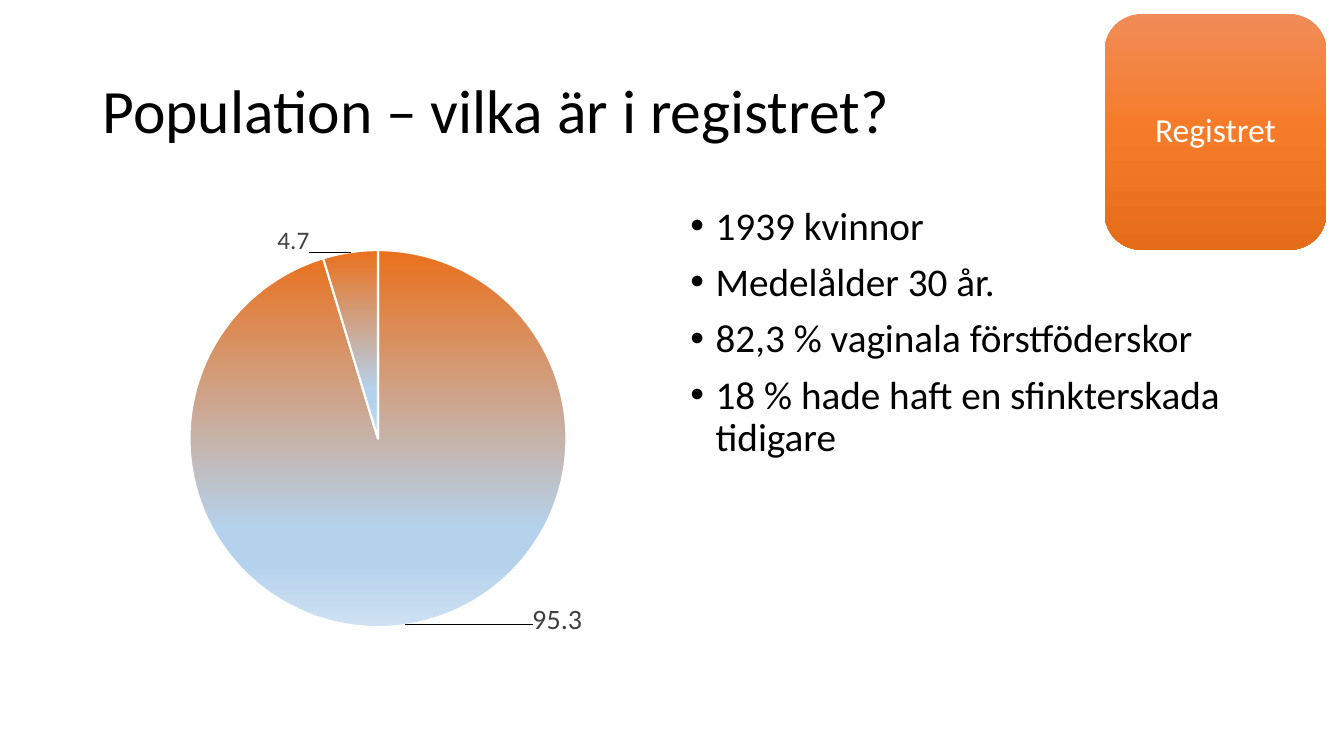
from dataclasses import dataclass
from lxml.etree import SubElement
from pptx import Presentation
from pptx.chart.data import CategoryChartData
from pptx.dml.color import RGBColor
from pptx.enum.chart import XL_CHART_TYPE, XL_LABEL_POSITION
from pptx.enum.shapes import MSO_SHAPE
from pptx.enum.text import MSO_ANCHOR, MSO_AUTO_SIZE, PP_ALIGN
from pptx.oxml import parse_xml
from pptx.oxml.ns import nsdecls, qn
from pptx.util import Pt


@dataclass(frozen=True)
class Theme:
    font: str = "Calibri"
    ink: str = "000000"
    paper: str = "FFFFFF"
    note: str = "404040"
    badge: tuple = ((0, "F18C57"), (50, "F67B28"), (100, "E56C19"))
    slice: tuple = ((0, "EA701C"), (74, "B5D2EC"), (83, "B5D2EC"), (100, "CEE1F2"))
    head: int = 44
    body: int = 28
    tag: int = 24
    base: int = 10


def style(font, size, color, face):
    font.name = face
    font.size = Pt(size)
    font.color.rgb = RGBColor.from_string(color)


def write(para, text, size, color, face, align=PP_ALIGN.LEFT, before=0, bullet=False):
    para.alignment = align
    para.line_spacing = 0.9
    para.space_before = Pt(before)
    run = para.add_run()
    run.text = text
    style(run.font, size, color, face)
    if bullet:
        props = para._p.get_or_add_pPr()
        props.set("marL", str(Pt(18)))
        props.set("indent", str(-Pt(18)))
        SubElement(props, qn("a:buFont")).set("typeface", "Arial")
        SubElement(props, qn("a:buChar")).set("char", "•")


def blend(fill, node, stops):
    fill.gradient()
    fill.gradient_angle = 270
    ramp = node.xpath(".//a:gsLst")[-1]
    for stop in list(ramp):
        ramp.remove(stop)
    for place, color in stops:
        stop = SubElement(ramp, qn("a:gs"))
        stop.set("pos", str(place * 1000))
        SubElement(stop, qn("a:srgbClr")).set("val", color)


def layout(inner=False, **parts):
    target = '<c:layoutTarget val="inner"/>' if inner else ""
    modes = "".join(f'<c:{key}Mode val="edge"/>' for key in "xy") if inner else ""
    sizes = "".join(f'<c:{key} val="{value}"/>' for key, value in parts.items())
    return parse_xml(
        f'<c:layout {nsdecls("c")}><c:manualLayout>{target}{modes}{sizes}'
        "</c:manualLayout></c:layout>"
    )


class Deck:
    def __init__(self, theme):
        self.theme = theme
        self.show = Presentation()
        self.show.slide_width = Pt(960)
        self.show.slide_height = Pt(540)
        self.slide = self.show.slides.add_slide(self.show.slide_layouts[1])

    def place(self, shape, box, anchor):
        shape.left, shape.top, shape.width, shape.height = map(Pt, box)
        frame = shape.text_frame
        frame.word_wrap = True
        frame.auto_size = MSO_AUTO_SIZE.NONE
        frame.vertical_anchor = anchor
        return frame

    def title(self, text, box):
        look = self.theme
        frame = self.place(self.slide.shapes.title, box, MSO_ANCHOR.MIDDLE)
        write(frame.paragraphs[0], text, look.head, look.ink, look.font)

    def list(self, items, box):
        look = self.theme
        frame = self.place(self.slide.placeholders[1], box, MSO_ANCHOR.TOP)
        for num, text in enumerate(items):
            para = frame.add_paragraph() if num else frame.paragraphs[0]
            write(para, text, look.body, look.ink, look.font, before=10, bullet=True)

    def badge(self, text, box):
        look = self.theme
        shape = self.slide.shapes.add_shape(MSO_SHAPE.ROUNDED_RECTANGLE, *map(Pt, box))
        shape.shadow.inherit = False
        shape.line.fill.background()
        blend(shape.fill, shape._element.spPr, look.badge)
        frame = self.place(shape, box, MSO_ANCHOR.MIDDLE)
        write(frame.paragraphs[0], text, look.tag, look.paper, look.font,
              align=PP_ALIGN.CENTER)

    def pie(self, values, labels, box):
        look = self.theme
        data = CategoryChartData()
        data.categories = [str(num + 1) for num in range(len(values))]
        data.add_series("Series 1", values)
        chart = self.slide.shapes.add_chart(XL_CHART_TYPE.PIE, *map(Pt, box), data).chart
        chart.has_legend = False
        chart.has_title = False
        style(chart.font, look.base, look.ink, look.font)
        area = chart._chartSpace.chart.plotArea
        for old in area.findall(qn("c:layout")):
            area.remove(old)
        area.insert(0, layout(True, x=0.17, y=0.1, w=0.66, h=0.79))
        chart.plots[0].vary_by_categories = True
        series = chart.plots[0].series[0]
        for num, (size, x, y) in enumerate(labels):
            point = series.points[num]
            blend(point.format.fill, series._element, look.slice)
            point.format.line.color.rgb = RGBColor.from_string(look.paper)
            point.format.line.width = Pt(1.5)
            label = point.data_label
            style(label.font, size, look.note, look.font)
            label.position = XL_LABEL_POSITION.OUTSIDE_END
            series._element.xpath(".//c:dLbl")[num].insert(1, layout(x=x, y=y))

    def save(self):
        self.show.save("out.pptx")


def main():
    deck = Deck(Theme())
    deck.badge("Registret", (789, 10, 158.5, 168.5))
    deck.title("Population – vilka är i registret?", (66, 28.75, 828, 104.4))
    deck.list(
        (
            "1939 kvinnor",
            "Medelålder 30 år.",
            "82,3 % vaginala förstföderskor",
            "18 % hade haft en sfinkterskada tidigare",
        ),
        (486, 143.75, 408, 342.6),
    )
    deck.pie((95.3, 4.7), ((20, 0.22, -0.06), (18, -0.07, 0.02)), (66, 143.75, 408, 342.6))
    deck.save()


if __name__ == "__main__":
    main()
